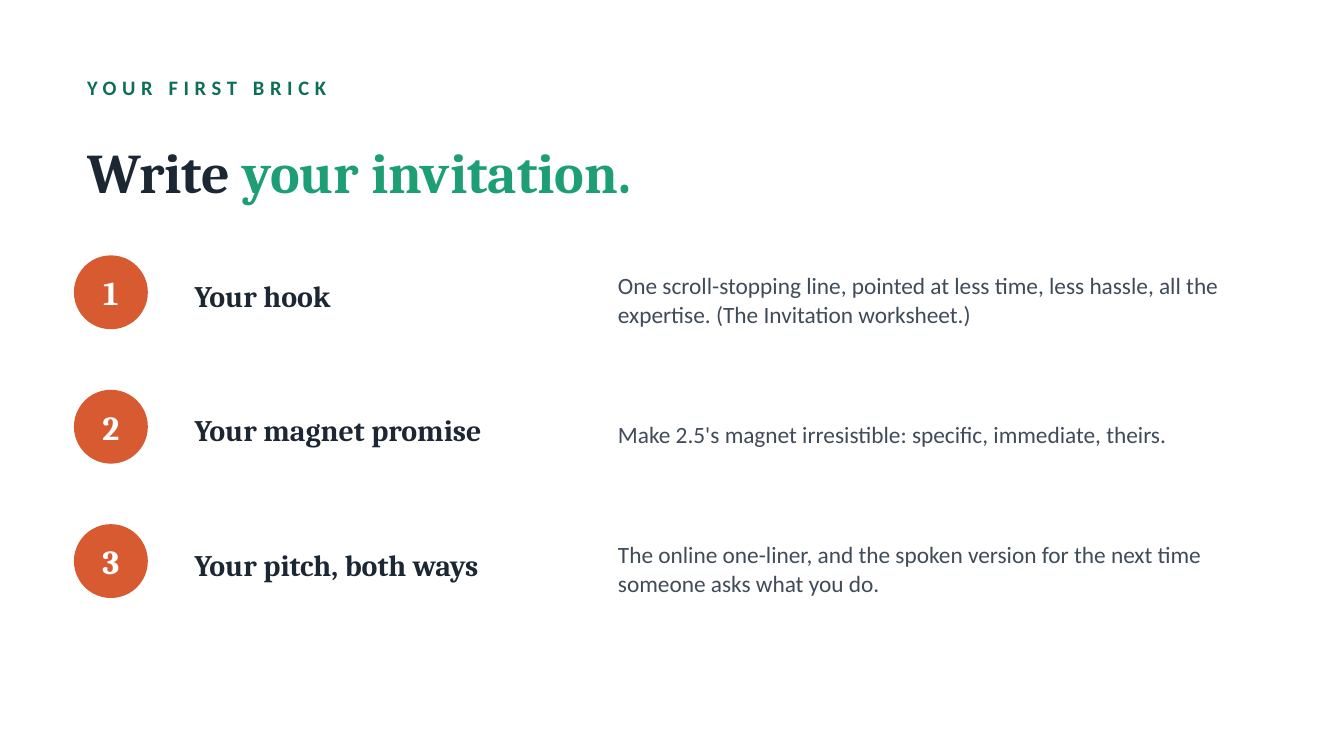
from pptx import Presentation
from pptx.dml.color import RGBColor
from pptx.enum.shapes import MSO_SHAPE as Shape
from pptx.enum.text import MSO_ANCHOR as Anchor, PP_ALIGN as Align
from pptx.util import Inches, Pt

# Content
KICKER = "YOUR FIRST BRICK"
HEADLINE = [("Write ", "ink"), ("your invitation.", "green")]
STEPS = [
    ("Your hook",
     "One scroll-stopping line, pointed at less time, less hassle, all the "
     "expertise. (The Invitation worksheet.)"),
    ("Your magnet promise",
     "Make 2.5's magnet irresistible: specific, immediate, theirs."),
    ("Your pitch, both ways",
     "The online one-liner, and the spoken version for the next time someone "
     "asks what you do."),
]

# Style
COLORS = {"ink": "1C2733", "green": "1D9E75", "deep": "0F6E56",
          "orange": "D85A30", "slate": "3F4B59", "white": "FFFFFF"}
HEAD_FONT, BODY_FONT = "Cambria", "Calibri"

# Layout in inches
SLIDE_WIDTH = 10
SLIDE_HEIGHT = SLIDE_WIDTH * 9 / 16
LEFT, WIDTH = 0.55, 8.9
FIRST_ROW, ROW_STEP = 1.9, 1.0
BADGE = 0.55


def rgb(name):
    return RGBColor.from_string(COLORS[name])


def write(shape, runs, font, size, bold=False):
    """Fill a shape with one paragraph of (text, colour) runs."""
    frame = shape.text_frame
    frame.word_wrap = True
    frame.vertical_anchor = Anchor.MIDDLE
    line = frame.paragraphs[0]
    line.font.name, line.font.size, line.font.bold = font, Pt(size), bold
    for text, color in runs:
        run = line.add_run()
        run.text = text
        run.font.color.rgb = rgb(color)
    return line


def add_text(box, *style):
    return write(slide.shapes.add_textbox(*map(Inches, box)), *style)


prs = Presentation()
prs.slide_width, prs.slide_height = Inches(SLIDE_WIDTH), Inches(SLIDE_HEIGHT)
slide = prs.slides.add_slide(prs.slide_layouts[6])
slide.background.fill.solid()
slide.background.fill.fore_color.rgb = rgb("white")

# Kicker and headline
kicker = add_text((LEFT, 0.5, WIDTH, 0.3), [(KICKER, "deep")], BODY_FONT, 11, True)
kicker.runs[0].font._element.set("spc", "300")  # letter spacing of 3 pt
add_text((LEFT, 0.85, WIDTH, 0.85), HEADLINE, HEAD_FONT, 30, True)

# Numbered steps
for i, (step, detail) in enumerate(STEPS):
    top = FIRST_ROW + i * ROW_STEP
    badge = slide.shapes.add_shape(
        Shape.OVAL, *map(Inches, (LEFT, top, BADGE, BADGE)))
    badge.shadow.inherit = False
    badge.fill.solid()
    badge.fill.fore_color.rgb = rgb("orange")
    badge.line.fill.background()
    frame = badge.text_frame
    frame.margin_left = frame.margin_right = 0
    frame.margin_top = frame.margin_bottom = 0
    number = write(badge, [(str(i + 1), "white")], HEAD_FONT, 18, True)
    number.alignment = Align.CENTER

    add_text((1.35, top - 0.05, 3, 0.7), [(step, "ink")], HEAD_FONT, 16, True)
    description = add_text((4.5, top - 0.05, 5, 0.75), [(detail, "slate")],
                           BODY_FONT, 12.5)
    description.line_spacing = 1.05

prs.save("out.pptx")
